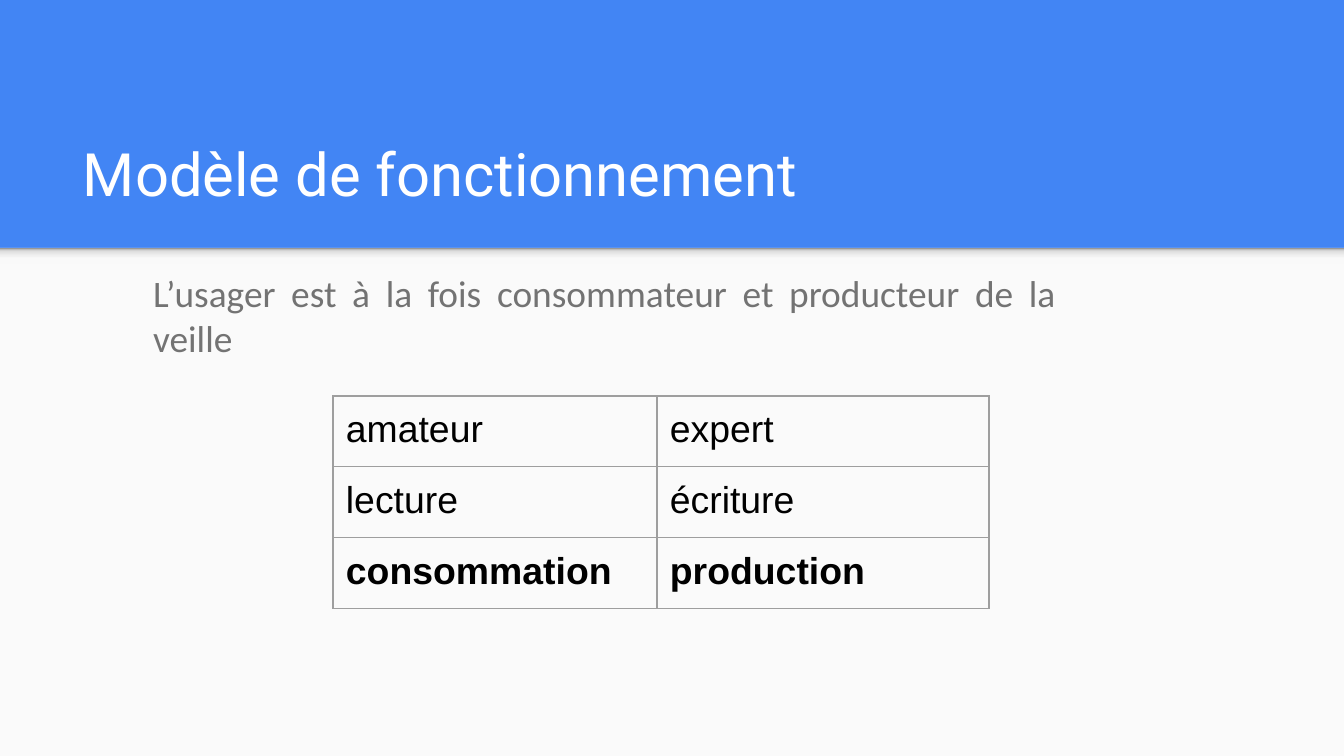
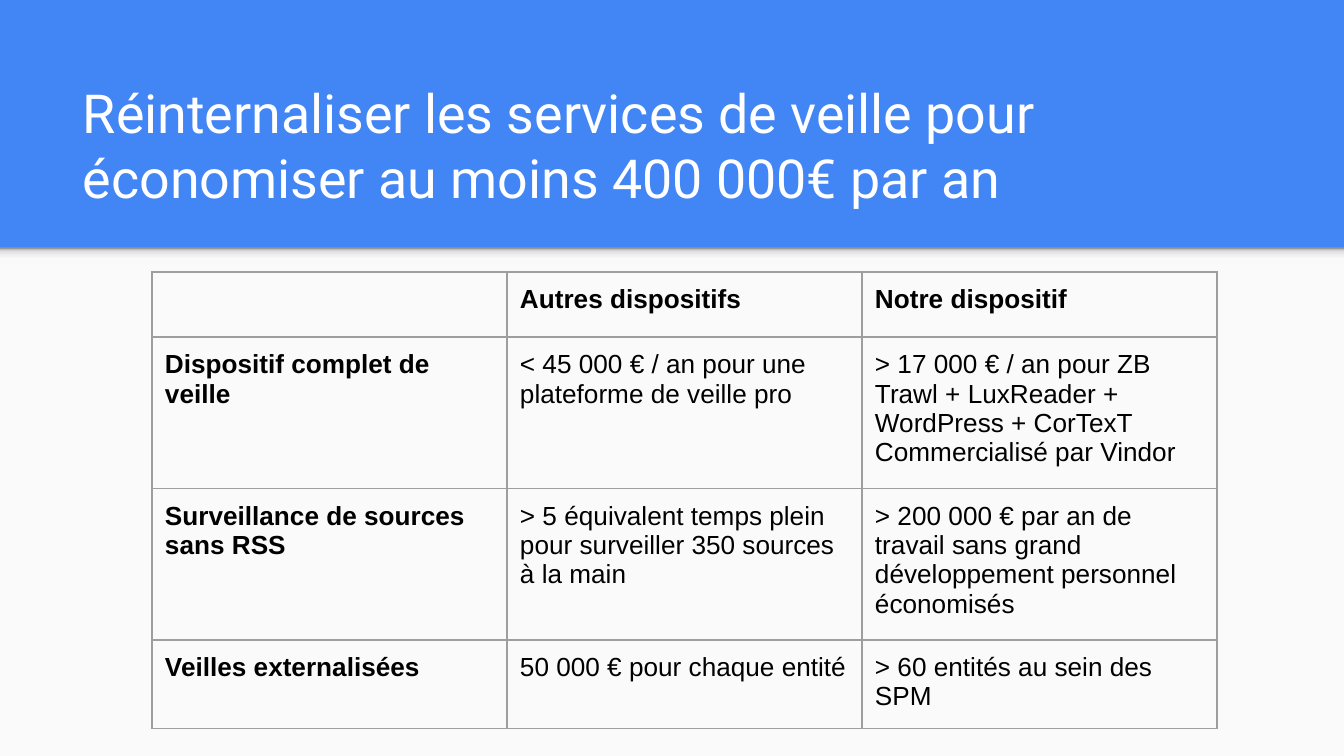
from dataclasses import dataclass

from lxml import etree
from pptx import Presentation
from pptx import util as u
from pptx.dml.color import RGBColor
from pptx.enum import shapes, text
from pptx.oxml.ns import qn

EMU_PER_PX = 9144000 / 1344
WIDTH, HEIGHT = 1344, 756
BAND_HEIGHT = 248
SHADOW_HEIGHT = 16
INSET = 13

COLORS = {
    "band": "4285F4",
    "panel": "FAFAFA",
    "title": "FFFFFF",
    "body": "737373",
    "cell": "000000",
    "border": "9E9E9E",
}
SHADOW_STOPS = {0: "F9F9F9", 36: "F9F9F9", 80: "DEDEDE", 100: "999999"}


@dataclass(frozen=True)
class Box:
    left: int
    top: int
    width: int
    height: int


@dataclass(frozen=True)
class TextStyle:
    font: str
    size: float
    color: str
    bold: bool = False
    align: text.PP_ALIGN = text.PP_ALIGN.LEFT


@dataclass(frozen=True)
class Grid:
    left: int
    top: int
    columns: tuple[int, ...]
    rows: tuple[int, ...]
    size: int
    cells: tuple[tuple[str, ...], ...]
    bold_cells: frozenset[tuple[int, int]]


def px(value: int) -> u.Emu:
    return u.Emu(round(value * EMU_PER_PX))


def place(box: Box) -> tuple[u.Emu, ...]:
    return px(box.left), px(box.top), px(box.width), px(box.height)


def rgb(name: str) -> RGBColor:
    return RGBColor.from_string(COLORS[name])


def write(frame, content: str, style: TextStyle) -> None:
    frame.text = content
    for paragraph in frame.paragraphs:
        paragraph.alignment = style.align
        paragraph.font.name = style.font
        paragraph.font.size = u.Pt(style.size)
        paragraph.font.bold = style.bold
        paragraph.font.color.rgb = rgb(style.color)


def add_text(slide, box: Box, content: str, style: TextStyle,
             anchor=text.MSO_ANCHOR.TOP) -> None:
    frame = slide.shapes.add_textbox(*place(box)).text_frame
    frame.word_wrap = True
    frame.vertical_anchor = anchor
    frame.margin_left = frame.margin_right = px(INSET)
    frame.margin_top = frame.margin_bottom = px(INSET)
    write(frame, content, style)


def add_rectangle(slide, box: Box):
    shape = slide.shapes.add_shape(shapes.MSO_SHAPE.RECTANGLE, *place(box))
    shape.shadow.inherit = False
    shape.line.fill.background()
    return shape


def add_band_shadow(slide) -> None:
    shape = add_rectangle(slide, Box(0, BAND_HEIGHT, WIDTH, SHADOW_HEIGHT))
    shape.fill.gradient()
    shape.fill.gradient_angle = 90
    stops = shape._element.spPr.find(qn("a:gradFill")).find(qn("a:gsLst"))
    for stop in list(stops):
        stops.remove(stop)
    for position, color in SHADOW_STOPS.items():
        stop = etree.SubElement(stops, qn("a:gs"), pos=str(position * 1000))
        etree.SubElement(stop, qn("a:srgbClr"), val=color)


def add_titled_slide(presentation, title: str, size: float, width: int):
    slide = presentation.slides.add_slide(presentation.slide_layouts[6])
    slide.background.fill.solid()
    slide.background.fill.fore_color.rgb = rgb("band")
    panel = add_rectangle(slide, Box(0, BAND_HEIGHT, WIDTH, HEIGHT - BAND_HEIGHT))
    panel.fill.solid()
    panel.fill.fore_color.rgb = rgb("panel")
    add_band_shadow(slide)
    add_text(slide, Box(70, 109, width, 113), title,
             TextStyle("Roboto", size, "title"), text.MSO_ANCHOR.BOTTOM)
    return slide


def set_borders(cell) -> None:
    properties = cell._tc.get_or_add_tcPr()
    for index, side in enumerate(("lnL", "lnR", "lnT", "lnB")):
        line = etree.Element(qn(f"a:{side}"), w=str(u.Pt(0.75)))
        fill = etree.SubElement(line, qn("a:solidFill"))
        etree.SubElement(fill, qn("a:srgbClr"), val=COLORS["border"])
        properties.insert(index, line)


def add_grid(slide, grid: Grid) -> None:
    box = Box(grid.left, grid.top, sum(grid.columns), sum(grid.rows))
    table = slide.shapes.add_table(
        len(grid.rows), len(grid.columns), *place(box)).table
    table.first_row = False
    table.horz_banding = False
    for column, width in zip(table.columns, grid.columns):
        column.width = px(width)
    for row_index, height in enumerate(grid.rows):
        table.rows[row_index].height = px(height)
        for column_index, content in enumerate(grid.cells[row_index]):
            cell = table.cell(row_index, column_index)
            cell.margin_left = cell.margin_right = px(INSET)
            cell.margin_top = cell.margin_bottom = px(INSET)
            cell.fill.background()
            set_borders(cell)
            bold = (row_index, column_index) in grid.bold_cells
            write(cell.text_frame, content,
                  TextStyle("Arial", grid.size, "cell", bold))


MODEL = Grid(
    left=333, top=396, columns=(324, 332), rows=(68,) * 3, size=20,
    cells=(
        ("amateur", "expert"),
        ("lecture", "écriture"),
        ("consommation", "production"),
    ),
    bold_cells=frozenset({(2, 0), (2, 1)}),
)

SAVINGS = Grid(
    left=152, top=272, columns=(355,) * 3, rows=(65, 144, 144, 86), size=14,
    cells=(
        ("", "Autres dispositifs", "Notre dispositif"),
        (
            "Dispositif complet de veille",
            "< 45 000 € / an pour une plateforme de veille pro",
            "> 17 000 € / an pour ZB Trawl + LuxReader + WordPress + CorTexT\n"
            "Commercialisé par Vindor",
        ),
        (
            "Surveillance de sources sans RSS",
            "> 5 équivalent temps plein pour surveiller 350 sources à la main",
            "> 200 000 € par an de travail sans grand développement personnel "
            "économisés",
        ),
        (
            "Veilles externalisées",
            "50 000 € pour chaque entité",
            "> 60 entités au sein des SPM",
        ),
    ),
    bold_cells=frozenset({(0, 1), (0, 2), (1, 0), (2, 0), (3, 0)}),
)


def main() -> None:
    presentation = Presentation()
    presentation.slide_width = px(WIDTH)
    presentation.slide_height = px(HEIGHT)

    model_slide = add_titled_slide(
        presentation, "Modèle de fonctionnement", 32, 1208)
    add_text(model_slide, Box(140, 257, 929, 499),
             "L’usager est à la fois consommateur et producteur de la veille",
             TextStyle("Calibri", 20, "body", align=text.PP_ALIGN.JUSTIFY))
    add_grid(model_slide, MODEL)

    savings_slide = add_titled_slide(
        presentation,
        "Réinternaliser les services de veille pour économiser au moins "
        "400 000€ par an", 28.8, 1141)
    add_grid(savings_slide, SAVINGS)

    presentation.save("out.pptx")


if __name__ == "__main__":
    main()
